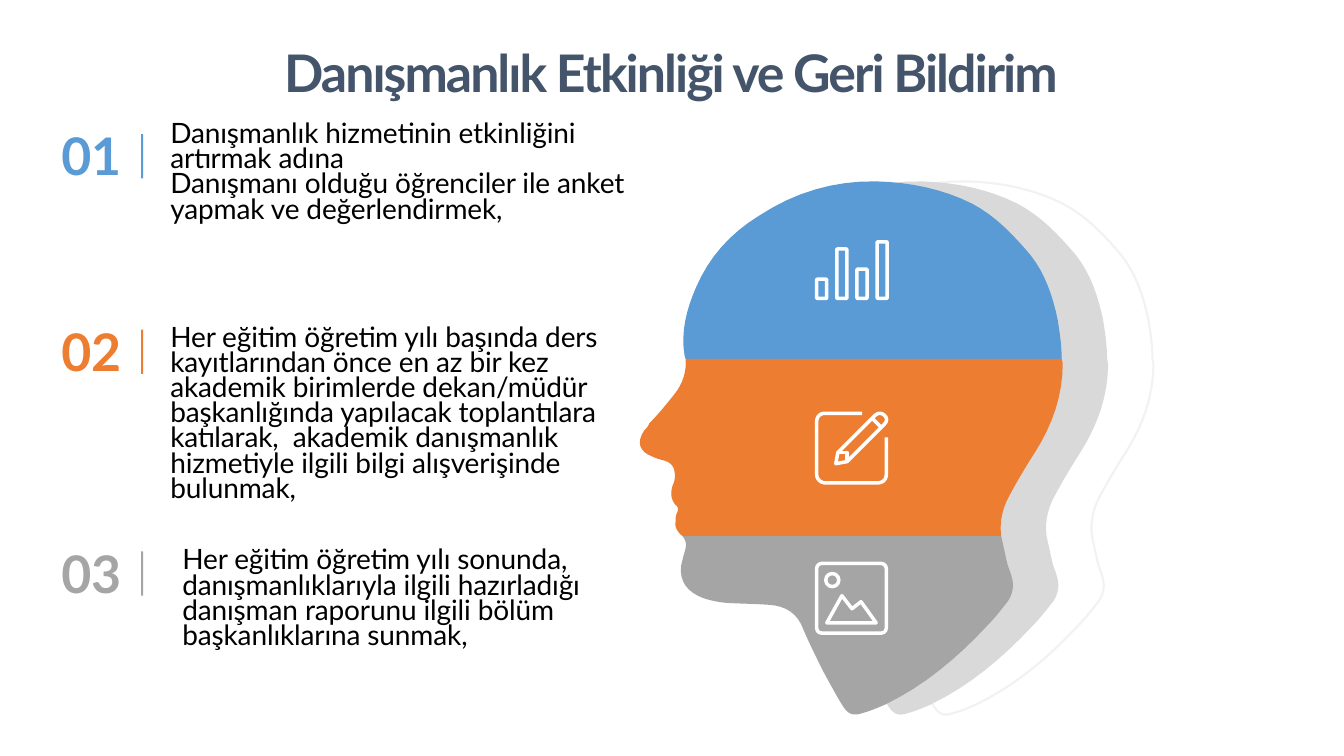
from pptx import Presentation
from pptx.dml.color import RGBColor
from pptx.enum.shapes import MSO_SHAPE
from pptx.enum.text import MSO_ANCHOR, MSO_AUTO_SIZE, PP_ALIGN
from pptx.util import Inches, Pt

BLUE = RGBColor(0x5B, 0x9B, 0xD5)
ORANGE = RGBColor(0xED, 0x7D, 0x31)
GRAY = RGBColor(0xA5, 0xA5, 0xA5)
LIGHT_GRAY = RGBColor(0xD9, 0xD9, 0xD9)
PALE_GRAY = RGBColor(0xF2, 0xF2, 0xF2)
NAVY = RGBColor(0x44, 0x54, 0x6A)
BLACK = RGBColor(0, 0, 0)
WHITE = RGBColor(0xFF, 0xFF, 0xFF)
FONT = "Lato"
CURVE_STEPS = 8
ICON_LINE = 2.5

presentation = Presentation()
presentation.slide_width = Inches(13.33)
presentation.slide_height = Inches(7.5)
slide = presentation.slides.add_slide(presentation.slide_layouts[6])
shapes = slide.shapes


def add_path(pieces, fill=None, line=None, width=1.5, shift=0, closed=True):
    """Pieces are points (x, y) or cubic curves (x1, y1, x2, y2, x, y), in inches."""
    points = [pieces[0]]
    for piece in pieces[1:]:
        if len(piece) == 2:
            points.append(piece)
            continue
        controls = [points[-1], piece[:2], piece[2:4], piece[4:]]
        for step in range(1, CURVE_STEPS + 1):
            t = step / CURVE_STEPS
            weights = ((1 - t) ** 3, 3 * t * (1 - t) ** 2, 3 * t * t * (1 - t), t ** 3)
            points.append(tuple(sum(w * c[axis] for w, c in zip(weights, controls))
                                for axis in (0, 1)))
    scaled = [(Inches(x + shift), Inches(y)) for x, y in points]
    builder = shapes.build_freeform(*scaled[0])
    builder.add_line_segments(scaled[1:], close=closed)
    return style(builder.convert_to_shape(), fill, line, width)


def style(shape, fill=None, line=None, width=1.5):
    shape.shadow.inherit = False
    for part, color in ((shape.fill, fill), (shape.line.fill, line)):
        if color is None:
            part.background()
        else:
            part.solid()
            part.fore_color.rgb = color
    if line is not None:
        shape.line.width = Pt(width)
    return shape


# Head profile, counterclockwise from the back of the crown
crown = [(10.53, 3.56), (10.53, 3.42, 10.51, 3.3, 10.49, 3.17),
         (10.44, 2.94, 10.37, 2.72, 10.22, 2.53), (10.05, 2.33, 9.87, 2.14, 9.64, 2.02),
         (9.34, 1.87, 9.02, 1.81, 8.7, 1.8), (8.27, 1.79, 7.88, 1.91, 7.53, 2.14),
         (7.25, 2.31, 7.03, 2.55, 6.9, 2.86), (6.81, 3.07, 6.75, 3.29, 6.79, 3.53),
         (6.8, 3.56)]
face = [(6.8, 3.56), (6.81, 3.69, 6.77, 3.81, 6.69, 3.91),
        (6.61, 4.01, 6.53, 4.11, 6.44, 4.2), (6.43, 4.23, 6.41, 4.25, 6.39, 4.27),
        (6.31, 4.39, 6.34, 4.48, 6.47, 4.53), (6.51, 4.55, 6.55, 4.56, 6.59, 4.57),
        (6.65, 4.59, 6.68, 4.62, 6.69, 4.68), (6.7, 4.73, 6.69, 4.78, 6.67, 4.82),
        (6.65, 4.89, 6.65, 4.95, 6.7, 5.01), (6.73, 5.03, 6.73, 5.06, 6.71, 5.1),
        (6.7, 5.12, 6.7, 5.15, 6.7, 5.18), (6.69, 5.23, 6.72, 5.28, 6.77, 5.32)]
jaw = [(6.77, 5.32), (6.8, 5.36, 6.81, 5.39, 6.8, 5.44),
       (6.79, 5.48, 6.78, 5.51, 6.77, 5.55), (6.72, 5.71, 6.78, 5.84, 6.92, 5.91),
       (7, 5.95, 7.1, 5.97, 7.19, 5.98), (7.33, 5.99, 7.47, 5.99, 7.62, 6),
       (7.79, 6.01, 7.91, 6.08, 7.97, 6.25), (8.03, 6.39, 8.1, 6.53, 8.17, 6.67),
       (8.23, 6.78, 8.29, 6.89, 8.35, 6.99), (8.41, 7.09, 8.46, 7.11, 8.57, 7.07),
       (8.64, 7.05, 8.71, 7.02, 8.78, 6.99), (9.17, 6.8, 9.49, 6.53, 9.78, 6.22),
       (9.86, 6.14, 9.93, 6.05, 10, 5.96), (10.05, 5.88, 10.06, 5.8, 10.03, 5.71),
       (10.02, 5.67, 10, 5.63, 9.99, 5.59), (9.97, 5.5, 9.95, 5.41, 9.93, 5.32)]
nape = [(9.93, 5.32), (9.91, 5.16, 9.95, 5.03, 10.01, 4.92),
        (10.09, 4.77, 10.18, 4.62, 10.27, 4.48), (10.44, 4.21, 10.54, 3.92, 10.54, 3.61),
        (10.53, 3.56)]
head = crown + face + jaw + nape

# Two echoes behind the head, then its three bands
add_path(head, line=PALE_GRAY, shift=0.9)
add_path(head, fill=LIGHT_GRAY, shift=0.45)
for band, color in ((crown, BLUE), (face + nape, ORANGE), (jaw, GRAY)):
    add_path(band, fill=color)

# Rounded icon parts: left, top, width, height, corner share
bar_bottom = 2.96
rounded_parts = [(8.1 + 0.2 * column, top, 0.1, bar_bottom - top, 0.08)
                 for column, top in enumerate((2.77, 2.47, 2.67, 2.4))]
rounded_parts.append((8.1, 5.59, 0.69, 0.69, 0.07))
for left, top, width, height, corner in rounded_parts:
    part = shapes.add_shape(MSO_SHAPE.ROUNDED_RECTANGLE, Inches(left), Inches(top),
                            Inches(width), Inches(height))
    part.adjustments[0] = corner
    style(part, line=WHITE, width=ICON_LINE)

# Sun and mountains of the landscape icon
sun = shapes.add_shape(MSO_SHAPE.OVAL, Inches(8.19), Inches(5.69), Inches(0.13), Inches(0.13))
style(sun, line=WHITE, width=ICON_LINE)
mountains = [(8.2, 6.18), (8.35, 5.91), (8.45, 6.04), (8.54, 5.97), (8.69, 6.18)]
add_path(mountains, line=WHITE, width=ICON_LINE)

# Page and pencil icon
page = [(8.55, 4.1), (8.18, 4.1), (8.14, 4.1, 8.1, 4.13, 8.1, 4.18), (8.1, 4.71),
        (8.1, 4.75, 8.14, 4.79, 8.18, 4.79), (8.71, 4.79),
        (8.76, 4.79, 8.79, 4.75, 8.79, 4.71), (8.79, 4.34)]
pencil = [(8.29, 4.6), (8.31, 4.49), (8.68, 4.12), (8.74, 4.06, 8.84, 4.15, 8.77, 4.21),
          (8.4, 4.58)]
pencil_tip = [(8.31, 4.49), (8.4, 4.49), (8.4, 4.58)]
pencil_band = [(8.66, 4.16), (8.73, 4.23)]
for pieces, closed in ((page, False), (pencil, True), (pencil_tip, False), (pencil_band, False)):
    add_path(pieces, line=WHITE, width=ICON_LINE, closed=closed)

# Numbers with their dividers, and the headings and body texts as one list
labels = [((2.41, 0.35, 8.49, 0.72), "Danışmanlık Etkinliği ve Geri Bildirim",
           NAVY, -140, MSO_ANCHOR.BOTTOM)]
for number, top, color in (("01", 1.18, BLUE), ("02", 3.12, ORANGE), ("03", 5.32, GRAY)):
    labels.append(((0.51, top, 0.79, 0.72), number, color, -20, MSO_ANCHOR.MIDDLE))
    divider = shapes.add_shape(MSO_SHAPE.RECTANGLE, Inches(1.4), Inches(top + 0.15),
                               Inches(0.02), Inches(0.44))
    style(divider, fill=color)

bodies = [
    ((1.59, 1.18, 4.95, 1.11),
     ["Danışmanlık hizmetinin etkinliğini artırmak adına",
      "Danışmanı olduğu öğrenciler ile anket yapmak ve değerlendirmek,"]),
    ((1.59, 3.2, 4.95, 1.87),
     ["Her eğitim öğretim yılı başında ders kayıtlarından önce en az bir kez akademik "
      "birimlerde dekan/müdür başkanlığında yapılacak toplantılara katılarak,  akademik "
      "danışmanlık hizmetiyle ilgili bilgi alışverişinde bulunmak,"]),
    ((1.71, 5.41, 4.54, 1.11),
     ["Her eğitim öğretim yılı sonunda, danışmanlıklarıyla ilgili hazırladığı danışman "
      "raporunu ilgili bölüm başkanlıklarına sunmak,"]),
]
texts = [(box, [text], color, spacing, anchor, True)
         for box, text, color, spacing, anchor in labels]
texts += [(box, lines, BLACK, -10, MSO_ANCHOR.TOP, False) for box, lines in bodies]

for box, lines, color, spacing, anchor, is_label in texts:
    frame = shapes.add_textbox(*map(Inches, box)).text_frame
    frame.word_wrap = not is_label
    frame.auto_size = MSO_AUTO_SIZE.SHAPE_TO_FIT_TEXT
    frame.vertical_anchor = anchor
    for index, line in enumerate(lines):
        paragraph = frame.paragraphs[0] if index == 0 else frame.add_paragraph()
        paragraph.alignment = PP_ALIGN.CENTER if is_label else PP_ALIGN.LEFT
        paragraph.line_spacing = Pt(44.4 if is_label else 18)
        run = paragraph.add_run()
        run.text = line
        run.font.name = FONT
        run.font.size = Pt(37 if is_label else 20)
        run.font.bold = is_label
        run.font.color.rgb = color
        run.font._element.set("spc", str(spacing))

presentation.save("out.pptx")
